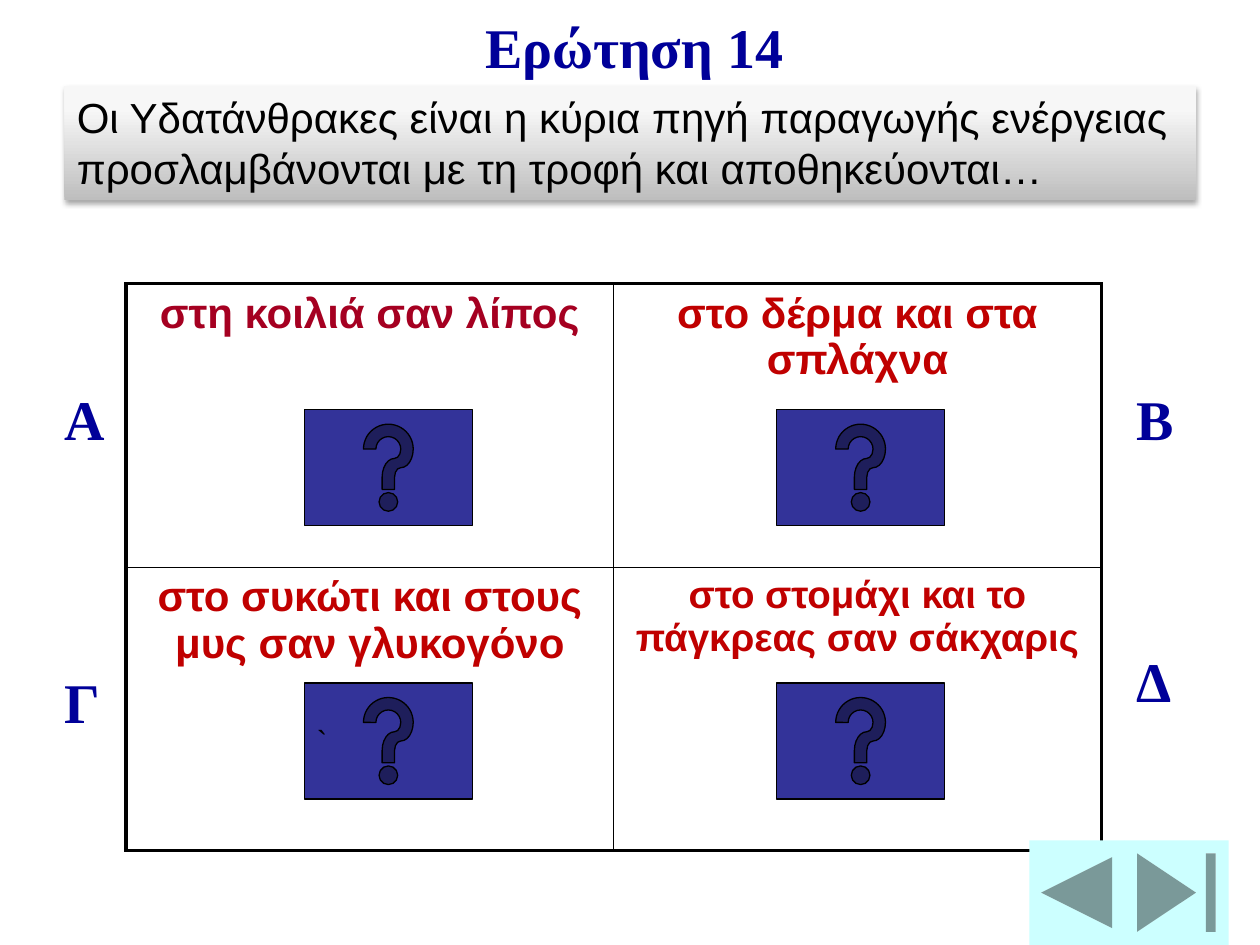
import lxml.etree
import pptx
import pptx.dml.color
import pptx.enum.shapes
import pptx.enum.text
import pptx.oxml
import pptx.oxml.ns
import pptx.util

Cm, Pt = pptx.util.Cm, pptx.util.Pt
RGBColor = pptx.dml.color.RGBColor
SHAPE = pptx.enum.shapes.MSO_SHAPE
ALIGN = pptx.enum.text.PP_ALIGN
ANCHOR = pptx.enum.text.MSO_ANCHOR
NS = pptx.oxml.ns.nsdecls("a")

BLACK = RGBColor(0x00, 0x00, 0x00)
WHITE = RGBColor(0xFF, 0xFF, 0xFF)
NAVY = RGBColor(0x00, 0x00, 0x99)
INDIGO = RGBColor(0x33, 0x33, 0x99)
CYAN = RGBColor(0xCC, 0xFF, 0xFF)
CRIMSON = RGBColor(0xA5, 0x00, 0x21)
RED = RGBColor(0xC0, 0x00, 0x00)

# letter, letter top (cm below the grid top), answer, size, colour
ANSWERS = [
    [("Α", 1.9, "στη κοιλιά σαν λίπος", 24, CRIMSON),
     ("Β", 1.9, "στο δέρμα και στα σπλάχνα", 24, RED)],
    [("Γ", 7.62, "στο συκώτι και στους μυς σαν γλυκογόνο", 24, RED),
     ("Δ", 7.19, "στο στομάχι και το πάγκρεας σαν σάκχαρις", 22, RED)],
]


def write(tf, text, size=24, font="Arial", color=BLACK, bold=False, align=ALIGN.LEFT):
    tf.word_wrap = True
    p = tf.paragraphs[0]
    p.alignment = align
    r = p.add_run()
    r.text = text
    r.font.size, r.font.name, r.font.bold = Pt(size), font, bold
    r.font.color.rgb = color


def add_heading(slide, text, x, y, w, h):
    tb = slide.shapes.add_textbox(Cm(x), Cm(y), Cm(w), Cm(h))
    write(tb.text_frame, text, size=32, font="Times New Roman", color=NAVY, bold=True)


def add_button(slide, kind, color, x, y, w, h, outlined=False):
    sp = slide.shapes.add_shape(kind, Cm(x), Cm(y), Cm(w), Cm(h))
    sp.shadow.inherit = False
    sp.fill.solid()
    sp.fill.fore_color.rgb = color
    if outlined:
        sp.line.color.rgb = BLACK
        sp.line.width = Pt(0.75)
    else:
        sp.line.fill.background()
    return sp


def set_borders(cell, **widths):
    tcPr = cell._tc.get_or_add_tcPr()
    for i, side in enumerate("LRTB"):
        tcPr.insert(i, pptx.oxml.parse_xml(
            f'<a:ln{side} {NS} w="{Pt(widths[side])}"><a:solidFill>'
            f'<a:srgbClr val="{BLACK}"/></a:solidFill></a:ln{side}>'))


def add_question(slide, text, x, y, w, h):
    sp = slide.shapes.add_shape(SHAPE.RECTANGLE, Cm(x), Cm(y), Cm(w), Cm(h))
    sp.line.fill.background()
    # Grey gradient, darkest at the bottom
    sp.fill.gradient()
    grad = sp._element.spPr.find(pptx.oxml.ns.qn("a:gradFill"))
    stops = "".join(f'<a:gs pos="{pos * 1000}"><a:srgbClr val="{c}"/></a:gs>'
                    for pos, c in ((0, "BEBEBE"), (80, "F7F7F7"), (100, "F8F8F8")))
    grad.getparent().replace(grad, pptx.oxml.parse_xml(
        f'<a:gradFill {NS} rotWithShape="1"><a:gsLst>{stops}</a:gsLst>'
        '<a:lin ang="16200000" scaled="0"/></a:gradFill>'))
    # Soft shadow below the box
    sp.shadow.inherit = False
    effects = sp._element.spPr.find(pptx.oxml.ns.qn("a:effectLst"))
    effects.append(pptx.oxml.parse_xml(
        f'<a:outerShdw {NS} blurRad="{Pt(3.1)}" dist="{Pt(1.8)}" dir="5400000" '
        f'rotWithShape="0"><a:srgbClr val="{BLACK}"><a:alpha val="35000"/>'
        '</a:srgbClr></a:outerShdw>'))
    sp.text_frame.vertical_anchor = ANCHOR.TOP
    write(sp.text_frame, text)


def add_answers(slide, x, y, w, h):
    frame = slide.shapes.add_table(2, 2, Cm(x), Cm(y), Cm(w), Cm(h))
    table = frame.table
    table.first_row = table.horz_banding = False
    thick, thin = 2.25, 1
    for i, row in enumerate(ANSWERS):
        for j, (letter, top, text, size, color) in enumerate(row):
            cell = table.cell(i, j)
            cell.fill.solid()
            cell.fill.fore_color.rgb = WHITE
            write(cell.text_frame, text, size=size, color=color, bold=True,
                  align=ALIGN.CENTER)
            set_borders(cell, L=thin if j else thick, R=thick if j else thin,
                        T=thin if i else thick, B=thick if i else thin)
            # Letter beside the grid and help button inside the cell
            add_heading(slide, letter, x + (w + 0.46 if j else -1.48), y + top, 1.27, 1.6)
            button = add_button(slide, SHAPE.ACTION_BUTTON_HELP, INDIGO,
                                x + 3.6 + 9.52 * j, y + 2.54 + 5.51 * i,
                                3.38, 2.34, outlined=True)
            if letter == "Γ":
                write(button.text_frame, "`", size=18)
                button.text_frame.word_wrap = False
                button.text_frame.vertical_anchor = ANCHOR.MIDDLE


def add_navigation(slide, x, y, w, h):
    back = 1.91
    add_button(slide, SHAPE.ACTION_BUTTON_END, CYAN, x + back, y, w - back, h)
    add_button(slide, SHAPE.ACTION_BUTTON_BACK_OR_PREVIOUS, CYAN, x, y, back, h)


def main():
    prs = pptx.Presentation()
    prs.slide_width, prs.slide_height = Cm(25.4), Cm(19.05)
    slide = prs.slides.add_slide(prs.slide_layouts[6])
    add_answers(slide, 2.54, 5.72, 19.66, 11.43)
    add_heading(slide, "Ερώτηση 14", 9.53, 0.13, 6.78, 1.62)
    add_navigation(slide, 20.75, 16.94, 4.02, 2.11)
    add_question(slide, "Οι Υδατάνθρακες είναι η κύρια πηγή παραγωγής ενέργειας "
                 "προσλαμβάνονται με τη τροφή και αποθηκεύονται…",
                 1.3, 1.73, 22.81, 2.31)
    prs.save("out.pptx")


if __name__ == "__main__":
    main()
